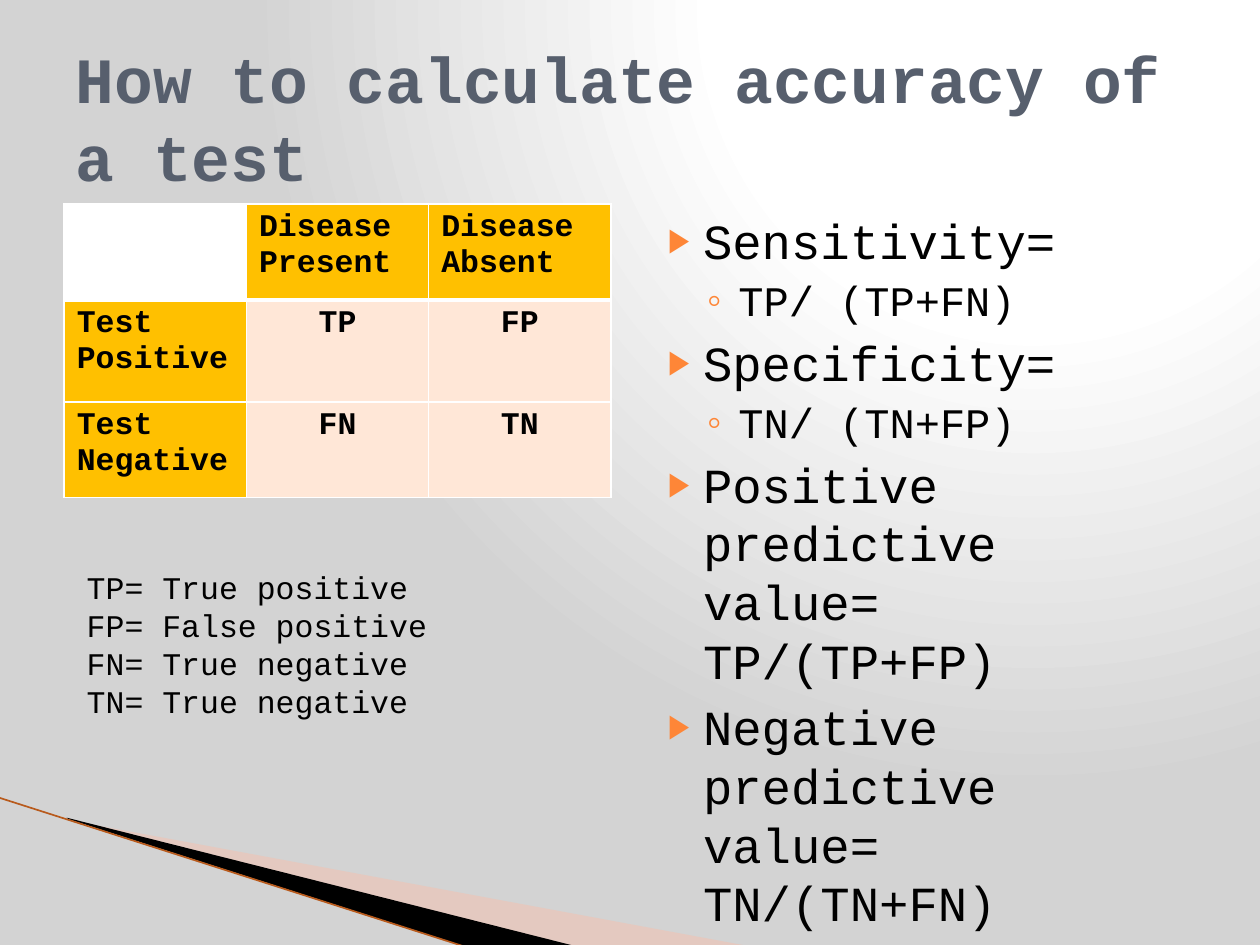
from lxml.etree import SubElement
from pptx import Presentation
from pptx.dml.color import RGBColor
from pptx.enum.text import MSO_ANCHOR, MSO_AUTO_SIZE, PP_ALIGN
from pptx.oxml import parse_xml
from pptx.oxml.ns import nsdecls, qn
from pptx.util import Inches, Pt

FONT = "Courier New"
BLACK = RGBColor(0x00, 0x00, 0x00)
WHITE = RGBColor(0xFF, 0xFF, 0xFF)
GREY = RGBColor(0xD3, 0xD3, 0xD3)
SLATE = RGBColor(0x57, 0x5F, 0x6D)
ORANGE = RGBColor(0xFE, 0x86, 0x37)
RUST = RGBColor(0xB8, 0x5A, 0x1C)
PEACH = RGBColor(0xFF, 0xBC, 0xA5)
AMBER = RGBColor(0xFF, 0xC0, 0x00)
CREAM = RGBColor(0xFF, 0xE7, 0xD7)

OUTCOMES = [
    ["", "Disease Present", "Disease Absent"],
    ["Test Positive", "TP", "FP"],
    ["Test Negative", "FN", "TN"],
]
ROW_HEIGHTS = [0.76, 0.81, 0.76]
FORMULAS = [
    (0, "Sensitivity="),
    (1, "TP/ (TP+FN)"),
    (0, "Specificity="),
    (1, "TN/ (TN+FP)"),
    (0, "Positive predictive value= TP/(TP+FP)"),
    (0, "Negative predictive value= TN/(TN+FN)"),
]
# Per level: text size, space before, left margin, hanging indent, bullet, bullet size in %
LEVELS = [(28, 4, 0.4, -0.28, "▶", 68), (24, 3.2, 0.68, -0.25, "◦", 100)]
LEGEND = ["TP= True positive", "FP= False positive",
          "FN= True negative", "TN= True negative"]


def add_run(paragraph, text, size, color=BLACK, bold=False):
    run = paragraph.add_run()
    run.text = text
    font = run.font
    font.name, font.size, font.bold = FONT, Pt(size), bold
    font.color.rgb = color


def place(shape, left, top, width, height):
    shape.left, shape.top = Inches(left), Inches(top)
    shape.width, shape.height = Inches(width), Inches(height)


def paragraphs(frame, count):
    """Return the first paragraph of the frame followed by new ones."""
    return [frame.paragraphs[0]] + [frame.add_paragraph() for _ in range(count - 1)]


def paint_background(slide):
    fill = slide.background.fill
    fill.gradient()
    bg_pr = slide.element.cSld.bg.bgPr
    stops = "".join(
        f'<a:gs pos="{pos}"><a:srgbClr val="{color}"/></a:gs>'
        for pos, color in [(0, WHITE), (40000, WHITE), (100000, GREY)])
    radial = parse_xml(
        f'<a:gradFill {nsdecls("a")} rotWithShape="1"><a:gsLst>{stops}</a:gsLst>'
        '<a:path path="circle"><a:fillToRect l="65000" t="0" r="0" b="98000"/>'
        '</a:path></a:gradFill>')
    bg_pr.replace(bg_pr.find(qn("a:gradFill")), radial)


def add_wedge(slide, points, color, opacity=None):
    corners = [(Inches(x), Inches(y)) for x, y in points]
    builder = slide.shapes.build_freeform(*corners[0], scale=1.0)
    builder.add_line_segments(corners[1:], close=True)
    wedge = builder.convert_to_shape()
    wedge.shadow.inherit = False
    wedge.fill.solid()
    wedge.fill.fore_color.rgb = color
    wedge.line.fill.background()
    if opacity is not None:
        srgb = wedge.element.spPr.find(qn("a:solidFill")).find(qn("a:srgbClr"))
        SubElement(srgb, qn("a:alpha"), val=str(opacity * 1000))


def add_corner_swoosh(slide, left, top):
    def shifted(points):
        return [(left + x, top + y) for x, y in points]

    add_wedge(slide, shifted([(0.56, 0.18), (5.96, 1.18), (4.57, 1.18), (0.56, 0.17)]),
              PEACH, opacity=40)
    add_wedge(slide, shifted([(0.54, 0.16), (4.58, 1.18), (3.73, 1.19), (0.55, 0.17)]),
              BLACK)
    (x1, y1), (x2, y2) = shifted([(0, 0), (3.72, 1.19)])
    edge = slide.shapes.add_connector(1, Inches(x1), Inches(y1), Inches(x2), Inches(y2))
    edge.line.color.rgb = RUST
    edge.line.width = Pt(0.95)
    SubElement(edge.element.spPr, qn("a:effectLst"))


def fill_title(title, box):
    place(title, *box)
    frame = title.text_frame
    frame.word_wrap = True
    frame.auto_size = MSO_AUTO_SIZE.NONE
    frame.vertical_anchor = MSO_ANCHOR.MIDDLE
    paragraph = frame.paragraphs[0]
    paragraph.alignment = PP_ALIGN.LEFT
    add_run(paragraph, "How to calculate accuracy of a test", 36.9, SLATE, True)


def set_bullet(paragraph, margin, indent, char, percent):
    p_pr = paragraph._p.get_or_add_pPr()
    p_pr.set("marL", str(Inches(margin)))
    p_pr.set("indent", str(Inches(indent)))
    SubElement(SubElement(p_pr, qn("a:buClr")), qn("a:srgbClr"), val=str(ORANGE))
    SubElement(p_pr, qn("a:buSzPct"), val=str(percent * 1000))
    SubElement(p_pr, qn("a:buChar"), char=char)


def fill_formulas(body, box):
    place(body, *box)
    frame = body.text_frame
    frame.word_wrap = True
    frame.auto_size = MSO_AUTO_SIZE.NONE
    frame.vertical_anchor = MSO_ANCHOR.TOP
    lines = paragraphs(frame, len(FORMULAS))
    for index, (paragraph, (level, text)) in enumerate(zip(lines, FORMULAS)):
        size, space, margin, indent, char, percent = LEVELS[level]
        paragraph.level = level
        set_bullet(paragraph, margin, indent, char, percent)
        paragraph.space_before = Pt(space if index else 0)
        add_run(paragraph, text, size)


def set_borders(cell, top, bottom):
    tc_pr = cell._tc.get_or_add_tcPr()
    for side, width in [("L", 1), ("R", 1), ("T", top), ("B", bottom)]:
        border = SubElement(tc_pr, qn(f"a:ln{side}"), w=str(Pt(width)))
        SubElement(SubElement(border, qn("a:solidFill")), qn("a:srgbClr"), val=str(WHITE))


def add_outcome_table(slide, left, top, width):
    size = len(OUTCOMES)
    table = slide.shapes.add_table(size, size, Inches(left), Inches(top), Inches(width),
                                   Inches(sum(ROW_HEIGHTS))).table
    table.first_row = table.horz_banding = False
    for column in table.columns:
        column.width = Inches(width / size)
    for r, (labels, height) in enumerate(zip(OUTCOMES, ROW_HEIGHTS)):
        table.rows[r].height = Inches(height)
        for c, label in enumerate(labels):
            cell = table.cell(r, c)
            set_borders(cell, top=3 if r == 1 else 1, bottom=3 if r == 0 else 1)
            cell.fill.solid()
            cell.fill.fore_color.rgb = CREAM if r and c else AMBER if label else WHITE
            if label:
                paragraph = cell.text_frame.paragraphs[0]
                paragraph.alignment = PP_ALIGN.CENTER if r and c else PP_ALIGN.LEFT
                add_run(paragraph, label, 18, bold=True)


def add_legend(slide, box):
    frame = slide.shapes.add_textbox(*map(Inches, box)).text_frame
    frame.word_wrap = True
    frame.auto_size = MSO_AUTO_SIZE.SHAPE_TO_FIT_TEXT
    for paragraph, text in zip(paragraphs(frame, len(LEGEND)), LEGEND):
        add_run(paragraph, text, 18)


def main():
    prs = Presentation()
    prs.slide_width, prs.slide_height = Inches(10), Inches(7.5)
    slide = prs.slides.add_slide(prs.slide_layouts[1])
    paint_background(slide)
    add_corner_swoosh(slide, -0.01, 6.33)
    fill_title(slide.shapes.title, (0.5, 0.3, 9, 1.25))
    add_outcome_table(slide, 0.51, 1.62, 4.34)
    fill_formulas(slide.placeholders[1], (5.08, 1.62, 4.42, 4.95))
    add_legend(slide, (0.59, 4.46, 4.17, 1.31))
    prs.save("out.pptx")


if __name__ == "__main__":
    main()
